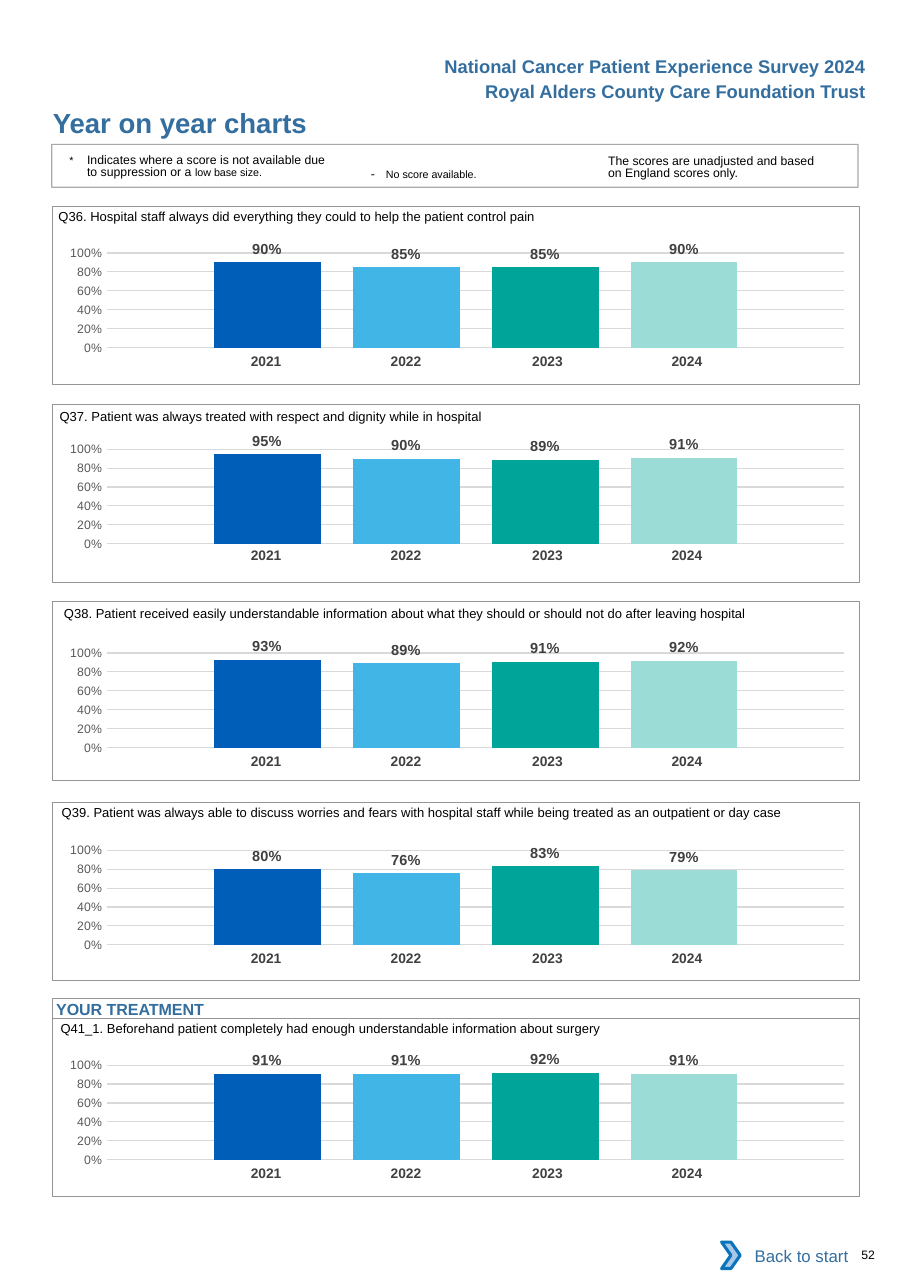
from lxml import etree
from pptx import Presentation
from pptx.chart.data import CategoryChartData
from pptx.dml.color import RGBColor
from pptx.enum import chart as charts, shapes, text
from pptx.oxml import parse_xml
from pptx.oxml.ns import nsdecls, qn
from pptx.util import Pt

BLUE, BLACK, GREY = "336E9F", "000000", "939598"
NO_GRID_STYLE = "{2D5ABB26-0587-4C30-8999-92F81FD0307C}"
PANEL_LEFT, PANEL_WIDTH, PANEL_HEIGHT = 34.5, 527, 116.6
# year, bar colour, column width, right inset of the year
YEARS = [
    ("2021", "005EB8", 91.4, 0),
    ("2022", "41B6E6", 91.4, 0),
    ("2023", "00A499", 96.5, 2.9),
    ("2024", "9CDCD7", 91.4, 8.6),
]
# question, its left and top, panel top, chart top, years top, scores
QUESTIONS = [
    ("Q36. Hospital staff always did everything they could to help the patient control pain",
     38.2, 129.6, 134.6, 151.9, 227.5, (0.90, 0.85, 0.85, 0.90)),
    ("Q37. Patient was always treated with respect and dignity while in hospital",
     38.9, 260.6, 264.2, 280.1, 354.2, (0.95, 0.90, 0.89, 0.91)),
    ("Q38. Patient received easily understandable information about what they should or "
     "should not do after leaving hospital",
     41.8, 389.2, 393.1, 413.3, 488.9, (0.93, 0.89, 0.91, 0.92)),
    ("Q39. Patient was always able to discuss worries and fears with hospital staff while "
     "being treated as an outpatient or day case",
     40.3, 519.1, 524.2, 542.2, 617.8, (0.80, 0.76, 0.83, 0.79)),
    ("Q41_1. Beforehand patient completely had enough understandable information about surgery",
     39.6, 660.2, 665.3, 682.6, 758.2, (0.91, 0.91, 0.92, 0.91)),
]


def rgb(value):
    return RGBColor.from_string(value)


def style_font(font, size, color=BLACK, bold=False):
    font.name, font.size, font.bold = "Arial", Pt(size), bold
    font.color.rgb = rgb(color)


def write(frame, runs, size, color=BLACK, bold=False, insets=(0, 0, 0, 0),
          align=text.PP_ALIGN.LEFT, anchor=text.MSO_ANCHOR.TOP):
    """Fill a frame with one paragraph; runs is a string or (string, size) pairs."""
    frame.word_wrap = True
    frame.vertical_anchor = anchor
    (frame.margin_left, frame.margin_top,
     frame.margin_right, frame.margin_bottom) = map(Pt, insets)
    paragraph = frame.paragraphs[0]
    paragraph.alignment = align
    for words, run_size in [(runs, size)] if isinstance(runs, str) else runs:
        run = paragraph.add_run()
        run.text = words
        style_font(run.font, run_size, color, bold)
    return paragraph


def add_text(slide, runs, left, top, width, height, size, **style):
    box = slide.shapes.add_textbox(Pt(left), Pt(top), Pt(width), Pt(height))
    return write(box.text_frame, runs, size, **style)


def add_box(slide, left, top, width, height, line=None, line_width=0.5, fill=None,
            kind=shapes.MSO_SHAPE.RECTANGLE):
    box = slide.shapes.add_shape(kind, Pt(left), Pt(top), Pt(width), Pt(height))
    box.shadow.inherit = False
    if fill:
        box.fill.solid()
        box.fill.fore_color.rgb = rgb(fill)
    else:
        box.fill.background()
    if line:
        box.line.color.rgb = rgb(line)
        box.line.width = Pt(line_width)
    else:
        box.line.fill.background()
    return box


def hang(paragraph, indent):
    properties = paragraph._p.get_or_add_pPr()
    properties.set("marL", str(Pt(indent)))
    properties.set("indent", str(-Pt(indent)))


def add_years(slide, top):
    width = sum(column for _, _, column, _ in YEARS)
    table = slide.shapes.add_table(1, len(YEARS), Pt(124.6), Pt(top), Pt(width), Pt(19.4)).table
    table.first_row = table.horz_banding = False
    table._tbl.tblPr.find(qn("a:tableStyleId")).text = NO_GRID_STYLE
    for index, (year, _, column, right) in enumerate(YEARS):
        table.columns[index].width = Pt(column)
        cell = table.cell(0, index)
        cell.fill.background()
        cell.margin_left, cell.margin_right = Pt(7.2), Pt(right)
        cell.margin_top = cell.margin_bottom = Pt(3.6)
        cell.text = year
        paragraph = cell.text_frame.paragraphs[0]
        paragraph.alignment = text.PP_ALIGN.CENTER
        style_font(paragraph.runs[0].font, 9, "414042", True)


def fix_plot(chart):
    """Set the inner plot area by hand and leave the chart without a background."""
    body = chart.element.find(qn("c:chart"))
    body.addnext(parse_xml(f'<c:spPr {nsdecls("c", "a")}><a:noFill/>'
                           '<a:ln><a:noFill/></a:ln></c:spPr>'))
    area = body.find(qn("c:plotArea"))
    for layout in area.findall(qn("c:layout")):
        area.remove(layout)
    layout = etree.Element(qn("c:layout"))
    manual = etree.SubElement(layout, qn("c:manualLayout"))
    for tag, value in (("layoutTarget", "inner"), ("xMode", "edge"), ("yMode", "edge"),
                       ("x", "0.079"), ("y", "0.145"), ("w", "0.915"), ("h", "0.666")):
        etree.SubElement(manual, qn(f"c:{tag}")).set("val", value)
    area.insert(0, layout)


def add_scores(slide, top, scores):
    data = CategoryChartData(number_format="0%")
    data.categories = ["1"]
    for number, score in enumerate(scores, 1):
        data.add_series(f"Series {number}", [score])
    chart = slide.shapes.add_chart(charts.XL_CHART_TYPE.COLUMN_CLUSTERED, Pt(28.1), Pt(top),
                                   Pt(PANEL_WIDTH), Pt(92.9), data).chart
    chart.has_title = chart.has_legend = False
    chart.font.name, chart.font.size = "Calibri", Pt(10)
    chart.font.color.rgb = rgb(BLACK)
    chart.category_axis.visible = False
    axis = chart.value_axis
    axis.minimum_scale, axis.maximum_scale, axis.major_unit = 0, 1, 0.2
    axis.major_tick_mark = axis.minor_tick_mark = charts.XL_TICK_MARK.NONE
    axis.format.line.fill.background()
    axis.major_gridlines.format.line.color.rgb = rgb("D9D9D9")
    axis.major_gridlines.format.line.width = Pt(0.75)
    axis.tick_labels.number_format = "0%"
    axis.tick_labels.number_format_is_linked = False
    style_font(axis.tick_labels.font, 8, "595959")
    plot = chart.plots[0]
    plot.vary_by_categories = False
    plot.gap_width, plot.overlap = 200, -30
    for series, (_, color, _, _) in zip(plot.series, YEARS):
        series.format.fill.solid()
        series.format.fill.fore_color.rgb = rgb(color)
        labels = series.data_labels
        labels.show_value = True
        labels.number_format, labels.number_format_is_linked = "0%", False
        labels.position = charts.XL_LABEL_POSITION.OUTSIDE_END
        style_font(labels.font, 9.5, "404040", True)
    fix_plot(chart)


def add_question(slide, question, left, top, panel_top, chart_top, years_top, scores):
    add_text(slide, question, left, top, 519, 17.3, 8.5, insets=(0, 6.5, 0, 0))
    add_years(slide, years_top)
    add_scores(slide, chart_top, scores)
    add_box(slide, PANEL_LEFT, panel_top, PANEL_WIDTH, PANEL_HEIGHT, GREY)


def add_key(slide):
    unadjusted = add_text(slide, "The scores are unadjusted and based on England scores only.",
                          397.4, 99.4, 144, 19.4, 8, insets=(0, 2.2, 0, 0))
    missing = add_text(slide, [("-\t", 8), ("No score available.", 7)],
                       235.4, 105, 131.8, 17.3, 8, insets=(7.2, 3.6, 7.2, 3.6))
    hang(missing, 9.8)
    suppressed = add_text(slide, [("*\t", 7),
                                  ("Indicates where a score is not available due to "
                                   "suppression or a ", 8),
                                  ("low base size.", 7)],
                          45.4, 99.4, 172, 19.4, 8, insets=(0, 1.5, 0, 0))
    hang(suppressed, 11.5)
    for note in (unadjusted, suppressed):
        note.line_spacing = Pt(8.1)
    frame = add_box(slide, 33.8, 94.3, PANEL_WIDTH, 28.1, GREY, 0.75)
    line_color = frame.line._ln.find(f".//{qn('a:srgbClr')}")
    etree.SubElement(line_color, qn("a:alpha")).set("val", "80000")


def add_back_button(slide):
    button = add_box(slide, 476.6, 805.2, 85, 30.2, fill="FFFFFF")
    write(button.text_frame, "Back to start", 11, BLUE, insets=(0, 3.6, 7.2, 3.6),
          align=text.PP_ALIGN.RIGHT, anchor=text.MSO_ANCHOR.MIDDLE)
    add_box(slide, 471.6, 811.7, 12.2, 17.3, "0A74BB", 2, "A8C7E9", shapes.MSO_SHAPE.CHEVRON)


def main():
    deck = Presentation()
    deck.slide_width, deck.slide_height = Pt(594.72), Pt(841.68)
    slide = deck.slides.add_slide(deck.slide_layouts[5])

    title = slide.shapes.title
    title.left, title.top, title.width, title.height = map(Pt, (33.8, 69.1, 324, 21.6))
    write(title.text_frame, "Year on year charts", 18, BLUE, True, (0.7, 0, 0, 0))
    for heading, top in (("National Cancer Patient Experience Survey 2024", 32.6),
                         ("Royal Alders County Care Foundation Trust", 48.8)):
        add_text(slide, heading, 253, top, 320, 21.6, 12, color=BLUE, bold=True,
                 insets=(7.2, 3.6, 7.2, 3.6), align=text.PP_ALIGN.RIGHT)

    add_key(slide)
    for question in QUESTIONS:
        add_question(slide, *question)
    section = add_box(slide, PANEL_LEFT, 652.3, PANEL_WIDTH, 13, GREY)
    write(section.text_frame, "YOUR TREATMENT", 10.5, BLUE, True, (2.2, 0.7, 0, 0))

    add_back_button(slide)
    add_text(slide, "52", 555.8, 815.3, 36.7, 9.4, 8, insets=(7.2, 0, 0, 0))
    deck.save("out.pptx")


if __name__ == "__main__":
    main()
